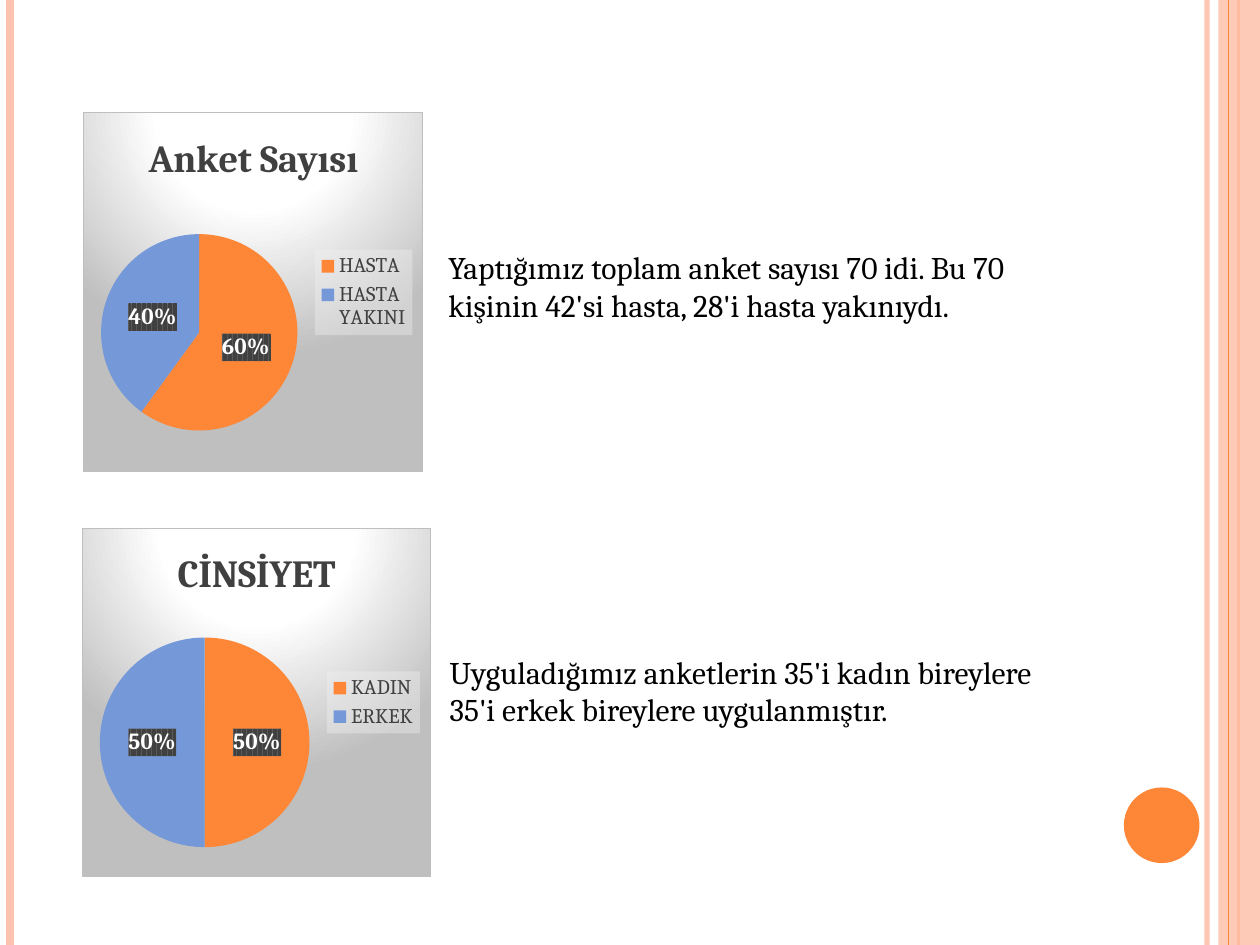
"""Build the survey slide: two pie charts, each with a short comment."""
from lxml import etree
from pptx import Presentation
from pptx import util as u
from pptx.chart import data
from pptx.dml import color
from pptx.enum import chart as ch, shapes
from pptx.oxml import ns

Inches, Pt = u.Inches, u.Pt
ORANGE, BLUE, PEACH, DARK = "FE8637", "7598D9", "FEC3AE", "404040"
PANEL = """<c:spPr {ns}><a:gradFill><a:gsLst>
<a:gs pos="0"><a:srgbClr val="FFFFFF"/></a:gs><a:gs pos="39000"><a:srgbClr val="FFFFFF"/></a:gs>
<a:gs pos="100000"><a:srgbClr val="BFBFBF"/></a:gs></a:gsLst>
<a:path path="circle"><a:fillToRect l="50000" t="-80000" r="50000" b="180000"/></a:path></a:gradFill>
<a:ln w="9525"><a:solidFill><a:srgbClr val="BFBFBF"/></a:solidFill></a:ln></c:spPr>"""
LEGEND = """<c:spPr {ns}><a:solidFill><a:srgbClr val="F2F2F2"><a:alpha val="39000"/></a:srgbClr>
</a:solidFill><a:ln><a:noFill/></a:ln></c:spPr>"""
LABEL = """<c:spPr {ns}><a:pattFill prst="dkVert"><a:fgClr><a:srgbClr val="404040"/></a:fgClr>
<a:bgClr><a:srgbClr val="595959"/></a:bgClr></a:pattFill><a:ln><a:noFill/></a:ln></c:spPr>"""


def paint(target, hex_color, opacity=100):
    target.solid()
    target.fore_color.rgb = color.RGBColor.from_string(hex_color)
    if opacity < 100:
        clr = target.fore_color._xFill.find(".//" + ns.qn("a:srgbClr"))
        etree.SubElement(clr, ns.qn("a:alpha")).set("val", str(opacity * 1000))


def style(font, size, hex_color, bold=False):
    font.name, font.size, font.bold = "Cambria", Pt(size), bold
    paint(font.fill, hex_color)


prs = Presentation()
prs.slide_width, prs.slide_height = Inches(10), Inches(7.5)
slide = prs.slides.add_slide(prs.slide_layouts[6])

for x, hex_color, width, opacity in [(9.58, PEACH, 3, 93), (0.08, PEACH, 4.5, 100),
                                     (9.83, ORANGE, 1.5, 100), (9.75, ORANGE, 0.75, 100)]:
    if x == 9.75:
        band = slide.shapes.add_shape(shapes.MSO_SHAPE.RECTANGLE, Inches(9.67), 0, Inches(0.33), Inches(7.5))
        paint(band.fill, PEACH, 87)
    stripe = slide.shapes.add_connector(shapes.MSO_CONNECTOR.STRAIGHT, Inches(x), 0, Inches(x), Inches(7.5))
    stripe.line.width = Pt(width)
    paint(stripe.line.fill, hex_color, opacity)
    etree.SubElement(stripe._element.spPr, ns.qn("a:effectLst"))

dot = slide.shapes.add_shape(shapes.MSO_SHAPE.OVAL, Inches(8.92), Inches(6.25), Inches(0.6), Inches(0.6))
paint(dot.fill, ORANGE)
for decoration in (band, dot):
    decoration.line.fill.background()
    decoration.shadow.inherit = False

surveys = [
    ("Anket Sayısı", {"HASTA": 60, "HASTA YAKINI": 40}, (0.66, 0.89, 2.7, 2.86), (3.46, 1.92),
     "Yaptığımız toplam anket sayısı 70 idi. Bu 70 kişinin 42'si hasta, 28'i hasta yakınıydı."),
    ("CİNSİYET", {"KADIN": 50, "ERKEK": 50}, (0.65, 4.19, 2.77, 2.77), (3.47, 5.13),
     "Uyguladığımız anketlerin 35'i kadın bireylere 35'i erkek bireylere uygulanmıştır."),
]
for title, shares, place, comment_place, comment in surveys:
    survey = data.CategoryChartData()
    survey.categories = list(shares)
    survey.add_series(title, list(shares.values()))
    pie = slide.shapes.add_chart(ch.XL_CHART_TYPE.PIE, *map(Inches, place), survey).chart
    style(pie.font, 10, "000000")
    pie.has_title = True
    pie.chart_title.text_frame.text = title
    style(pie.chart_title.text_frame.paragraphs[0].runs[0].font, 22, DARK, True)
    pie.chart_title.include_in_layout = False
    pie.has_legend = True
    pie.legend.position = ch.XL_LEGEND_POSITION.RIGHT
    pie.legend.include_in_layout = False
    style(pie.legend.font, 12, DARK)

    plot = pie.plots[0]
    plot.vary_by_categories = True
    for index, hex_color in enumerate((ORANGE, BLUE)):
        paint(plot.series[0].points[index].format.fill, hex_color)
    labels = plot.series[0].data_labels
    labels.show_percentage, labels.show_value = True, False
    labels.number_format, labels.number_format_is_linked = "0%", False
    labels.position = ch.XL_LABEL_POSITION.CENTER
    style(labels.font, 13.3, "FFFFFF", True)

    for parent, background in [(pie._chartSpace, PANEL), (pie.legend._element, LEGEND),
                               (labels._element, LABEL)]:
        look = etree.fromstring(background.format(ns=ns.nsdecls("c", "a")))
        parent.find(ns.qn("c:txPr")).addprevious(look)

    note = slide.shapes.add_textbox(*map(Inches, comment_place), Inches(5), Inches(0.71)).text_frame
    note.word_wrap = True
    note.text = comment
    style(note.paragraphs[0].runs[0].font, 18, "000000")

prs.save("out.pptx")
